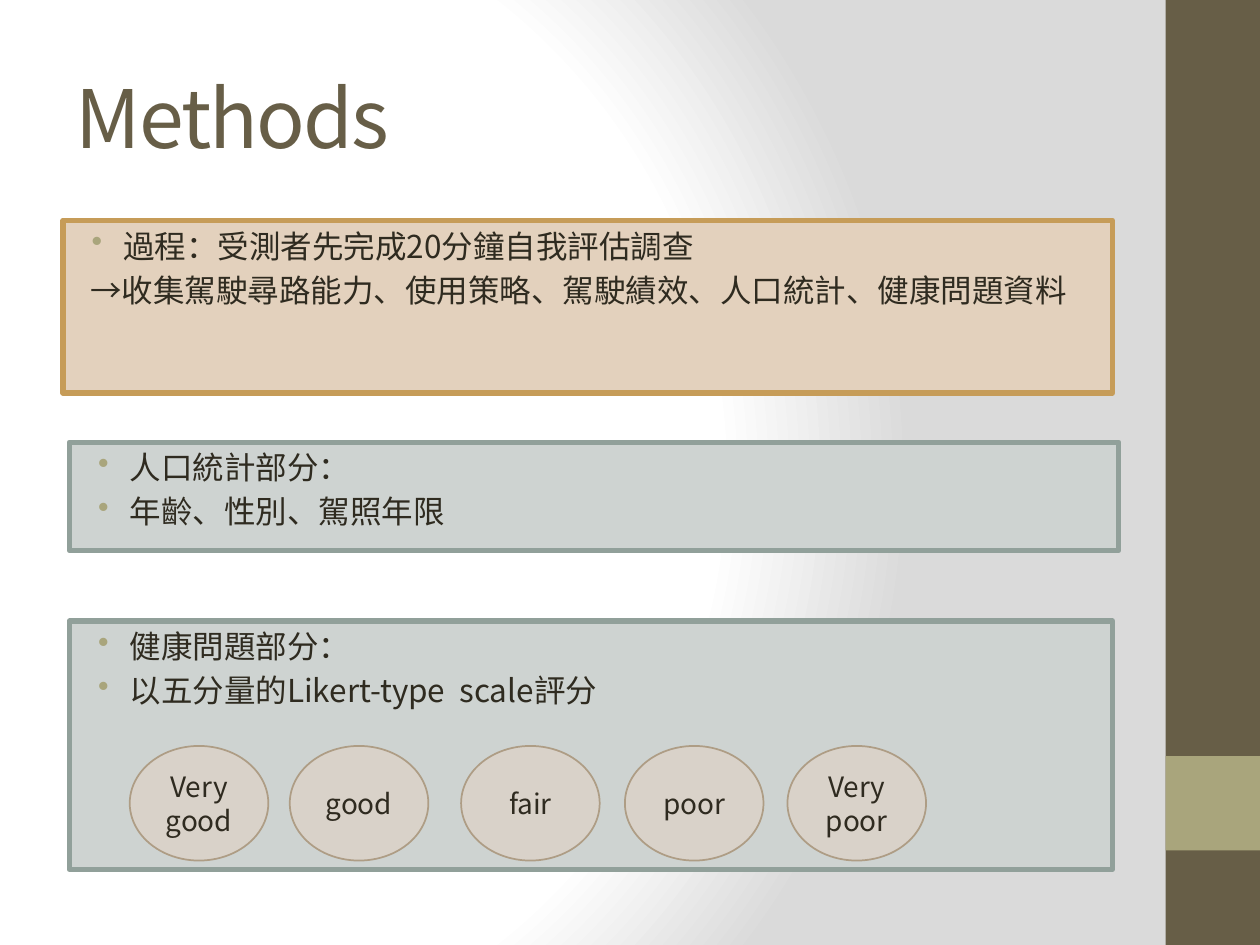
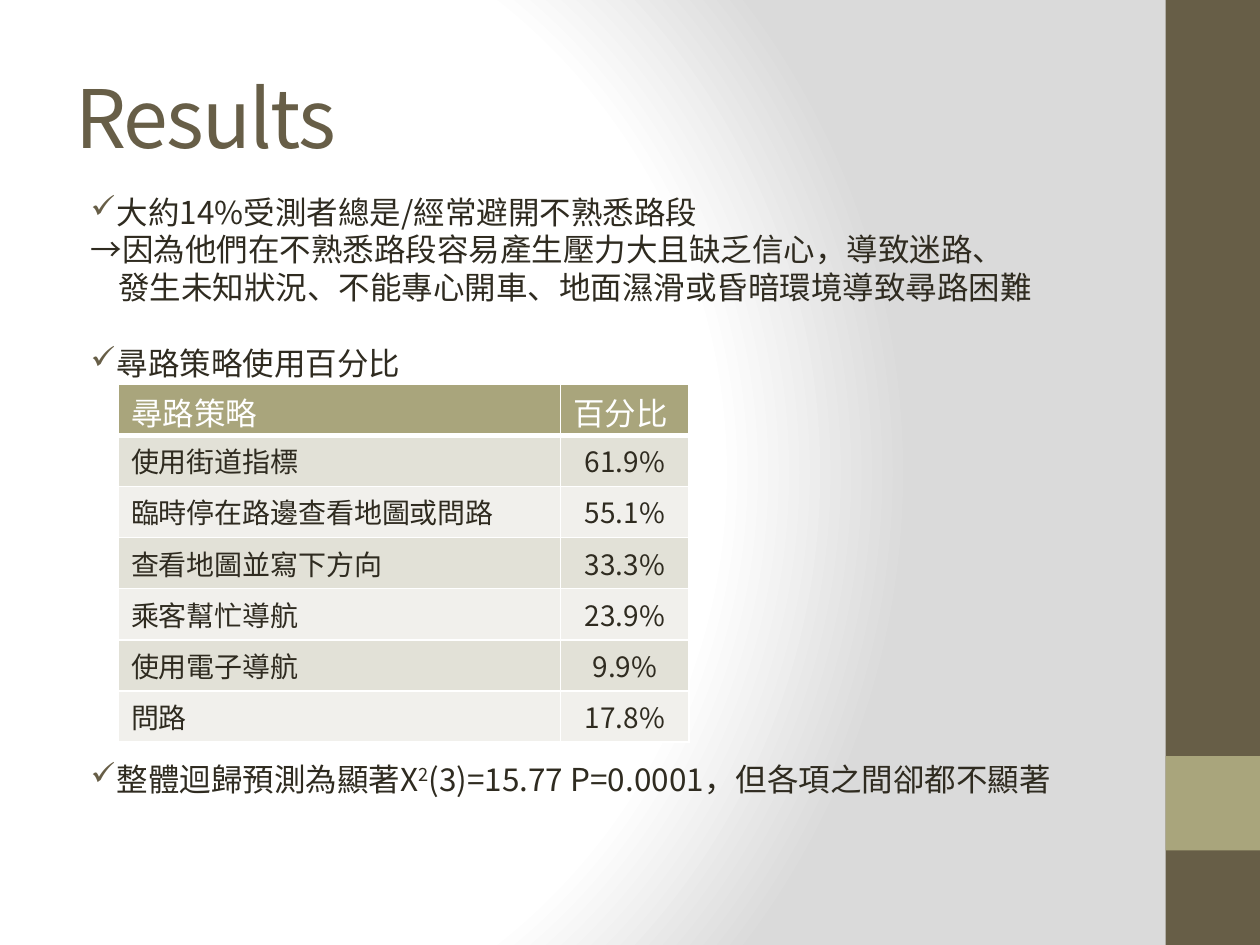
"""Build two slides on driver wayfinding: Methods and Results."""
from dataclasses import dataclass

from lxml.etree import SubElement
from pptx import Presentation
from pptx.dml.color import RGBColor
from pptx.enum.shapes import MSO_SHAPE
from pptx.enum.text import MSO_ANCHOR, PP_ALIGN
from pptx.oxml import parse_xml
from pptx.oxml.ns import nsdecls, qn
from pptx.util import Inches, Pt


@dataclass(frozen=True)
class Theme:
    """Colours, type sizes and spacing of the deck."""
    font: str = "Noto Sans CJK SC"
    dark: str = "675E47"
    olive: str = "A9A57C"
    ink: str = "2F2B20"
    white: str = "FFFFFF"
    grey: str = "DADADA"
    sand: str = "E3D1BD"
    gold: str = "C69C58"
    mist: str = "CED3D1"
    teal: str = "91A09A"
    stone: str = "D9D2C9"
    brown: str = "AE9D85"
    row_bands: tuple[str, str] = ("E2E1D7", "F1F0EC")
    title_size: int = 46
    body_size: int = 18
    small_size: int = 16
    body_leading: float = 1.2
    table_leading: float = 1.4


THEME = Theme()


@dataclass(frozen=True)
class Frame:
    """Position and size in inches."""
    left: float
    top: float
    width: float
    height: float

    def lengths(self) -> tuple:
        """Return the four values as lengths."""
        return tuple(map(Inches, (self.left, self.top, self.width, self.height)))


@dataclass(frozen=True)
class Line:
    """One paragraph with its bullet, indents in inches and space before in points."""
    text: str
    bullet: str = ""
    bullet_color: str = THEME.olive
    margin: float = 0
    indent: float = 0
    before: float = 0


@dataclass(frozen=True)
class Panel:
    """A bordered text panel."""
    frame: Frame
    fill: str
    border: str
    lines: tuple[Line, ...]


@dataclass(frozen=True)
class Rating:
    """One step of the rating scale."""
    left: float
    label: str


def point(text: str) -> Line:
    """Describe a dotted panel line."""
    return Line(text, "•", margin=0.38, indent=-0.25, before=3.6)


def finding(text: str, before: float = 0) -> Line:
    """Describe a ticked result line."""
    return Line(text, "✓", THEME.dark, 0.21, -0.21, before)


TITLE_FRAME = Frame(0.5, 0.3, 8.33, 1.25)
BANDS = ((Frame(9.25, 0, 0.75, 7.5), THEME.dark), (Frame(9.25, 6, 0.75, 0.75), THEME.olive))

PANELS = (
    Panel(Frame(0.5, 1.75, 8.33, 1.37), THEME.sand, THEME.gold, (
        point("過程：受測者先完成20分鐘自我評估調查"),
        Line("→收集駕駛尋路能力、使用策略、駕駛績效、人口統計、健康問題資料",
             margin=0.12, before=3.6))),
    Panel(Frame(0.55, 3.51, 8.33, 0.86), THEME.mist, THEME.teal, (
        point("人口統計部分："), point("年齡、性別、駕照年限"))),
    Panel(Frame(0.55, 4.93, 8.28, 1.97), THEME.mist, THEME.teal, (
        point("健康問題部分："), point("以五分量的Likert-type  scale評分"))),
)

RATINGS = (Rating(1.03, "Very\ngood"), Rating(2.3, "good"), Rating(3.66, "fair"),
           Rating(4.96, "poor"), Rating(6.25, "Very\npoor"))

BODY_LINE = THEME.body_size * THEME.body_leading
FINDINGS = (
    finding("大約14%受測者總是/經常避開不熟悉路段"),
    Line("→因為他們在不熟悉路段容易產生壓力大且缺乏信心，導致迷路、"),
    Line("發生未知狀況、不能專心開車、地面濕滑或昏暗環境導致尋路困難", margin=0.22),
    finding("尋路策略使用百分比", BODY_LINE),
)
REGRESSION = finding("整體迴歸預測為顯著X", 10 * BODY_LINE)
REGRESSION_TAIL = "(3)=15.77 P=0.0001，但各項之間卻都不顯著"

STRATEGIES = (
    ("尋路策略", "百分比"),
    ("使用街道指標", "61.9%"),
    ("臨時停在路邊查看地圖或問路", "55.1%"),
    ("查看地圖並寫下方向", "33.3%"),
    ("乘客幫忙導航", "23.9%"),
    ("使用電子導航", "9.9%"),
    ("問路", "17.8%"),
)


def style_span(span, size: float, color: str) -> None:
    """Set font, size and colour of one run."""
    span.font.name = THEME.font
    span.font.size = Pt(size)
    span.font.color.rgb = RGBColor.from_string(color)
    SubElement(span.font._element, qn("a:ea"), typeface=THEME.font)


def style_para(para, size: float, color: str, leading: float = THEME.body_leading) -> None:
    """Set the leading and the runs of one paragraph."""
    para.line_spacing = Pt(size * leading)
    for span in para.runs:
        style_span(span, size, color)


def write_line(para, line: Line) -> None:
    """Write one body paragraph with its bullet and indents."""
    para.text = line.text
    para.alignment = PP_ALIGN.LEFT
    para.space_before = Pt(line.before)
    style_para(para, THEME.body_size, THEME.ink)
    properties = para._p.get_or_add_pPr()
    properties.set("marL", str(Inches(line.margin)))
    properties.set("indent", str(Inches(line.indent)))
    if line.bullet:
        color = SubElement(properties, qn("a:buClr"))
        SubElement(color, qn("a:srgbClr"), val=line.bullet_color)
        SubElement(properties, qn("a:buChar"), char=line.bullet)
    else:
        SubElement(properties, qn("a:buNone"))


def write_lines(text_frame, lines: tuple[Line, ...]) -> None:
    """Fill a text frame with body paragraphs."""
    text_frame.word_wrap = True
    text_frame.vertical_anchor = MSO_ANCHOR.TOP
    text_frame.text = "\n".join(line.text for line in lines)
    for para, line in zip(text_frame.paragraphs, lines):
        write_line(para, line)


def add_box(page, kind, frame: Frame, fill: str, border: str = "", width: float = 1):
    """Draw a filled shape, with a border when one is given."""
    box = page.shapes.add_shape(kind, *frame.lengths())
    box.shadow.inherit = False
    box.fill.solid()
    box.fill.fore_color.rgb = RGBColor.from_string(fill)
    if border:
        box.line.color.rgb = RGBColor.from_string(border)
        box.line.width = Pt(width)
    else:
        box.line.fill.background()
    return box


def set_background(deck) -> None:
    """Give the master a radial gradient."""
    fill = deck.slide_master.background.fill
    fill.gradient()
    gradient = deck.slide_master.element.xpath("p:cSld/p:bg/p:bgPr/a:gradFill")[0]
    stops = "".join(
        f'<a:gs pos="{position}000"><a:srgbClr val="{color}"/></a:gs>'
        for position, color in ((0, THEME.white), (75, THEME.white), (100, THEME.grey)))
    gradient.getparent().replace(gradient, parse_xml(
        f'<a:gradFill {nsdecls("a")} rotWithShape="1"><a:gsLst>{stops}</a:gsLst>'
        '<a:path path="circle"><a:fillToRect l="20000" t="50000" r="100000" b="50000"/>'
        '</a:path></a:gradFill>'))


def add_page(deck, heading: str):
    """Add a page with the shared title and side bands."""
    page = deck.slides.add_slide(deck.slide_layouts.get_by_name("Title Only"))
    title = page.shapes.title
    title.left, title.top, title.width, title.height = TITLE_FRAME.lengths()
    title.text_frame.text = heading
    title.text_frame.vertical_anchor = MSO_ANCHOR.MIDDLE
    para = title.text_frame.paragraphs[0]
    para.alignment = PP_ALIGN.LEFT
    for span in para.runs:
        style_span(span, THEME.title_size, THEME.dark)
        span.font._element.set("spc", "-100")
    for frame, color in BANDS:
        add_box(page, MSO_SHAPE.RECTANGLE, frame, color)
    return page


def add_rating(page, rating: Rating) -> None:
    """Draw one oval of the rating scale."""
    oval = add_box(page, MSO_SHAPE.OVAL, Frame(rating.left, 5.92, 1.1, 0.91),
                   THEME.stone, THEME.brown)
    oval.text_frame.text = rating.label
    oval.text_frame.vertical_anchor = MSO_ANCHOR.MIDDLE
    for para in oval.text_frame.paragraphs:
        para.alignment = PP_ALIGN.CENTER
        style_para(para, THEME.small_size, THEME.ink)


def style_cell(cell, row: int, column: int) -> None:
    """Format one table cell by its place."""
    header = row == 0
    properties = cell._tc.get_or_add_tcPr()
    for side in ("lnL", "lnR", "lnT", "lnB"):
        thick = (header and side == "lnB") or (row == 1 and side == "lnT")
        border = SubElement(properties, qn(f"a:{side}"), w=str(Pt(3 if thick else 1)))
        fill = SubElement(border, qn("a:solidFill"))
        SubElement(fill, qn("a:srgbClr"), val=THEME.white)
    cell.fill.solid()
    cell.fill.fore_color.rgb = RGBColor.from_string(
        THEME.olive if header else THEME.row_bands[(row - 1) % 2])
    cell.margin_bottom = 0
    para = cell.text_frame.paragraphs[0]
    para.alignment = PP_ALIGN.CENTER if column and not header else PP_ALIGN.LEFT
    style_para(para, THEME.body_size if header else THEME.small_size,
               THEME.white if header else THEME.ink, THEME.table_leading)


def add_strategy_table(page) -> None:
    """Draw the table of wayfinding strategies."""
    frame = Frame(0.94, 3.05, 4.53, 2.84)
    table = page.shapes.add_table(len(STRATEGIES), 2, *frame.lengths()).table
    for column, width in zip(table.columns, (3.51, 1.02)):
        column.width = Inches(width)
    for row, values in enumerate(STRATEGIES):
        for column, value in enumerate(values):
            cell = table.cell(row, column)
            cell.text_frame.text = value
            style_cell(cell, row, column)


def build_methods(deck) -> None:
    """Build the Methods page."""
    page = add_page(deck, "Methods")
    for panel in PANELS:
        box = add_box(page, MSO_SHAPE.RECTANGLE, panel.frame, panel.fill, panel.border, 3)
        write_lines(box.text_frame, panel.lines)
    for rating in RATINGS:
        add_rating(page, rating)


def build_results(deck) -> None:
    """Build the Results page."""
    page = add_page(deck, "Results")
    box = page.shapes.add_textbox(*Frame(0.62, 1.48, 8.28, 5.55).lengths())
    write_lines(box.text_frame, FINDINGS + (REGRESSION,))
    para = box.text_frame.paragraphs[-1]
    for text, raised in (("2", True), (REGRESSION_TAIL, False)):
        span = para.add_run()
        span.text = text
        style_span(span, THEME.body_size, THEME.ink)
        if raised:
            span.font._element.set("baseline", "30000")
    add_strategy_table(page)


def main() -> None:
    """Build and save the deck."""
    deck = Presentation()
    deck.slide_width, deck.slide_height = Inches(10), Inches(7.5)
    set_background(deck)
    build_methods(deck)
    build_results(deck)
    deck.save("out.pptx")


if __name__ == "__main__":
    main()
